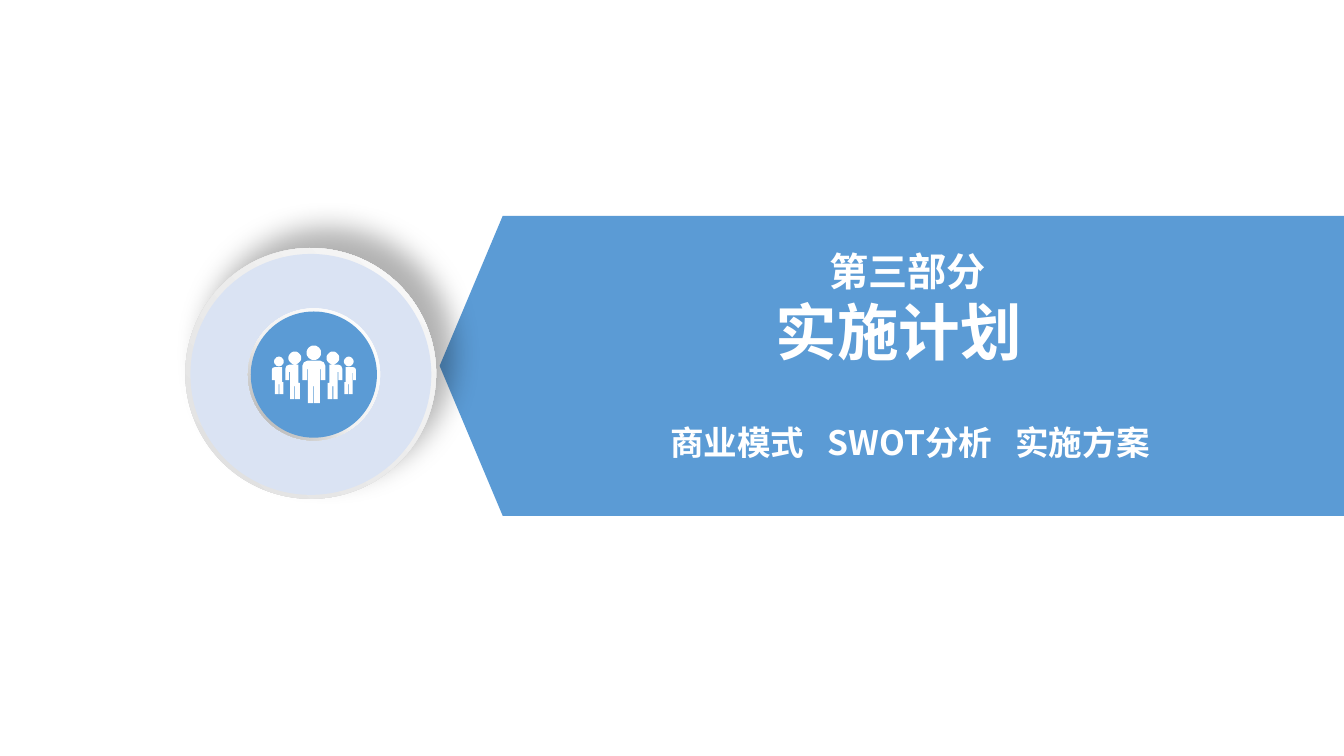
from dataclasses import dataclass
from math import cos, pi, sin

from lxml.etree import SubElement
from pptx import Presentation
from pptx.dml.color import RGBColor
from pptx.enum.shapes import MSO_SHAPE as Kind
from pptx.enum.text import PP_ALIGN as Align
from pptx.oxml.ns import qn
from pptx.util import Cm, Pt

FONT = "Noto Sans CJK SC"
COLORS = {"blue": "5B9BD5", "pale": "DAE3F3", "white": "FFFFFF",
          "light": "F2F2F2", "silver": "D9D9D9", "gray": "A6A6A6", "black": "000000"}
UNITS_PER_CM = 100
Points = list[tuple[float, float]]


@dataclass
class Disc:
    left: float
    top: float
    size: float
    kind: Kind = Kind.OVAL
    color: str = ""
    rotation: float = 0


@dataclass
class Head:
    dx: float
    y: float
    radius: float


@dataclass
class Line:
    text: str
    size: int
    indent: float = 0


AXIS = 7.91
HEADS = [Head(0, 8.89, 0.18), Head(-0.48, 9.02, 0.16), Head(-0.88, 9.11, 0.12)]
OUTER_BODY = [(-0.77, 9.63), (-0.77, 9.93), (-0.87, 9.93), (-0.87, 9.68), (-0.89, 9.68),
              (-0.89, 9.93), (-0.98, 9.93), (-0.98, 9.4), (-0.99, 9.4), (-0.99, 9.58),
              (-1.06, 9.58), (-1.06, 9.32), (-1.04, 9.27), (-0.98, 9.25), (-0.8, 9.25),
              (-0.8, 9.63)]
INNER_BODY = [(-0.35, 9.65), (-0.35, 10.06), (-0.47, 10.06), (-0.47, 9.73), (-0.49, 9.73),
              (-0.49, 10.06), (-0.6, 10.06), (-0.6, 9.37), (-0.62, 9.37), (-0.62, 9.58),
              (-0.72, 9.58), (-0.72, 9.3), (-0.69, 9.22), (-0.62, 9.19), (-0.39, 9.19),
              (-0.39, 9.65)]
LEADER_HALF = [(-0.01, 9.73), (-0.01, 10.16), (-0.15, 10.16), (-0.15, 9.3), (-0.17, 9.3),
               (-0.17, 9.58), (-0.29, 9.58), (-0.29, 9.22), (-0.25, 9.13), (-0.16, 9.09)]


def rgb(name: str) -> RGBColor:
    return RGBColor.from_string(COLORS[name])


def paint(s, color: str) -> None:
    s.shadow.inherit = False
    s.line.fill.background()
    if color:
        s.fill.solid()
        s.fill.fore_color.rgb = rgb(color)


def add_color(parent, name: str):
    return SubElement(parent, qn("a:srgbClr"), val=COLORS[name])


def add_gradient(s, stops: dict[int, str], angle: int | None = None) -> None:
    """Fill along an angle, or outwards from the top right corner without one."""
    s.fill.background()
    empty = s._element.spPr.find(qn("a:noFill"))
    grad = empty.makeelement(qn("a:gradFill"), {"rotWithShape": "1"})
    empty.getparent().replace(empty, grad)
    stop_list = SubElement(grad, qn("a:gsLst"))
    for percent, name in stops.items():
        add_color(SubElement(stop_list, qn("a:gs"), pos=str(percent * 1000)), name)
    if angle is None:
        focus = SubElement(grad, qn("a:path"), path="circle")
        SubElement(focus, qn("a:fillToRect"), l="100000", b="100000")
    else:
        SubElement(grad, qn("a:lin"), ang=str(angle * 60000), scaled="0")


def add_shadow(s, blur: int, distance: int, angle: int, alpha: int) -> None:
    effects = s._element.spPr.find(qn("a:effectLst"))
    outer = SubElement(effects, qn("a:outerShdw"), blurRad=str(Pt(blur)),
                       dist=str(Pt(distance)), dir=str(angle * 60000),
                       algn="ctr", rotWithShape="0")
    SubElement(add_color(outer, "black"), qn("a:alpha"), val=str(alpha * 1000))


def add_disc(shapes, disc: Disc):
    s = shapes.add_shape(disc.kind, Cm(disc.left), Cm(disc.top), Cm(disc.size), Cm(disc.size))
    s.rotation = disc.rotation
    paint(s, disc.color)
    return s


def add_outline(shapes, contours: list[Points], color: str) -> None:
    """Join closed contours, given in centimetres, in one shape."""
    scaled = [[(x * UNITS_PER_CM, y * UNITS_PER_CM) for x, y in c] for c in contours]
    builder = shapes.build_freeform(*scaled[0][0], scale=Cm(1) / UNITS_PER_CM)
    for i, contour in enumerate(scaled):
        if i:
            builder.move_to(*contour[0])
        builder.add_line_segments(contour[1:], close=True)
    paint(builder.convert_to_shape(), color)


def mirror(points: Points) -> Points:
    return [(-x, y) for x, y in reversed(points)]


def head_points(head: Head, steps: int = 32) -> Points:
    turns = [2 * pi * i / steps for i in range(steps)]
    return [(head.dx + head.radius * cos(t), head.y + head.radius * sin(t)) for t in turns]


def add_people(shapes) -> None:
    leader, *side_heads = map(head_points, HEADS)
    sides = [*side_heads, OUTER_BODY, INNER_BODY]
    contours = [leader, LEADER_HALF + mirror(LEADER_HALF), *sides, *map(mirror, sides)]
    add_outline(shapes, [[(AXIS + x, y) for x, y in c] for c in contours], "white")


def add_text(shapes, box: tuple[float, ...], lines: list[Line], frame: dict, para: dict):
    tf = shapes.add_textbox(*map(Cm, box)).text_frame
    for name, value in frame.items():
        setattr(tf, name, value)
    for i, line in enumerate(lines):
        p = tf.add_paragraph() if i else tf.paragraphs[0]
        for name, value in para.items():
            setattr(p, name, value)
        if line.indent:
            p._p.get_or_add_pPr().set("marL", str(Cm(line.indent)))
        r = p.add_run()
        r.text = line.text
        for name, value in {"name": FONT, "size": Pt(line.size), "bold": True}.items():
            setattr(r.font, name, value)
        r.font.color.rgb = rgb("white")
        SubElement(r._r.get_or_add_rPr(), qn("a:ea"), typeface=FONT)
    return tf


def add_tabs(p, stops: list[float]) -> None:
    tabs = SubElement(p._p.get_or_add_pPr(), qn("a:tabLst"))
    for stop in stops:
        SubElement(tabs, qn("a:tab"), pos=str(Cm(stop)), algn="l")


def main() -> None:
    prs = Presentation()
    prs.slide_width, prs.slide_height = Cm(33.87), Cm(19.05)
    shapes = prs.slides.add_slide(prs.slide_layouts[6]).shapes

    banner = [(33.87, 5.44), (33.87, 13), (12.67, 13), (11.08, 9.22), (12.67, 5.44)]
    add_outline(shapes, [banner], "blue")

    rim = add_disc(shapes, Disc(4.67, 6.25, 6.32, rotation=29.5))
    add_gradient(rim, {0: "white", 100: "silver"})
    add_shadow(rim, blur=20, distance=19, angle=310, alpha=30)
    add_disc(shapes, Disc(4.8, 6.4, 6.07, color="pale", rotation=29.5))
    ring = add_disc(shapes, Disc(6.25, 7.77, 3.33, Kind.DONUT))
    ring.adjustments[0] = 0.05
    add_gradient(ring, {0: "white", 55: "light", 100: "gray"}, angle=135)
    add_disc(shapes, Disc(6.32, 7.85, 3.18, color="blue"))
    add_people(shapes)

    add_text(shapes, (17.2, 6.1, 10.9, 3.33),
             [Line("第三部分", 28, indent=0.44), Line("实施计划", 44)],
             {"word_wrap": True}, {"alignment": Align.CENTER})
    margins = dict.fromkeys(["margin_left", "margin_top", "margin_right", "margin_bottom"], 0)
    topics = add_text(shapes, (16.89, 10.44, 13.11, 1.12),
                      [Line("商业模式\tSWOT分析\t实施方案", 24)],
                      {"word_wrap": True, **margins},
                      {"line_spacing": 1.2, "space_before": Pt(4.8)})
    add_tabs(topics.paragraphs[0], [3.97, 8.7])
    prs.save("out.pptx")


if __name__ == "__main__":
    main()
